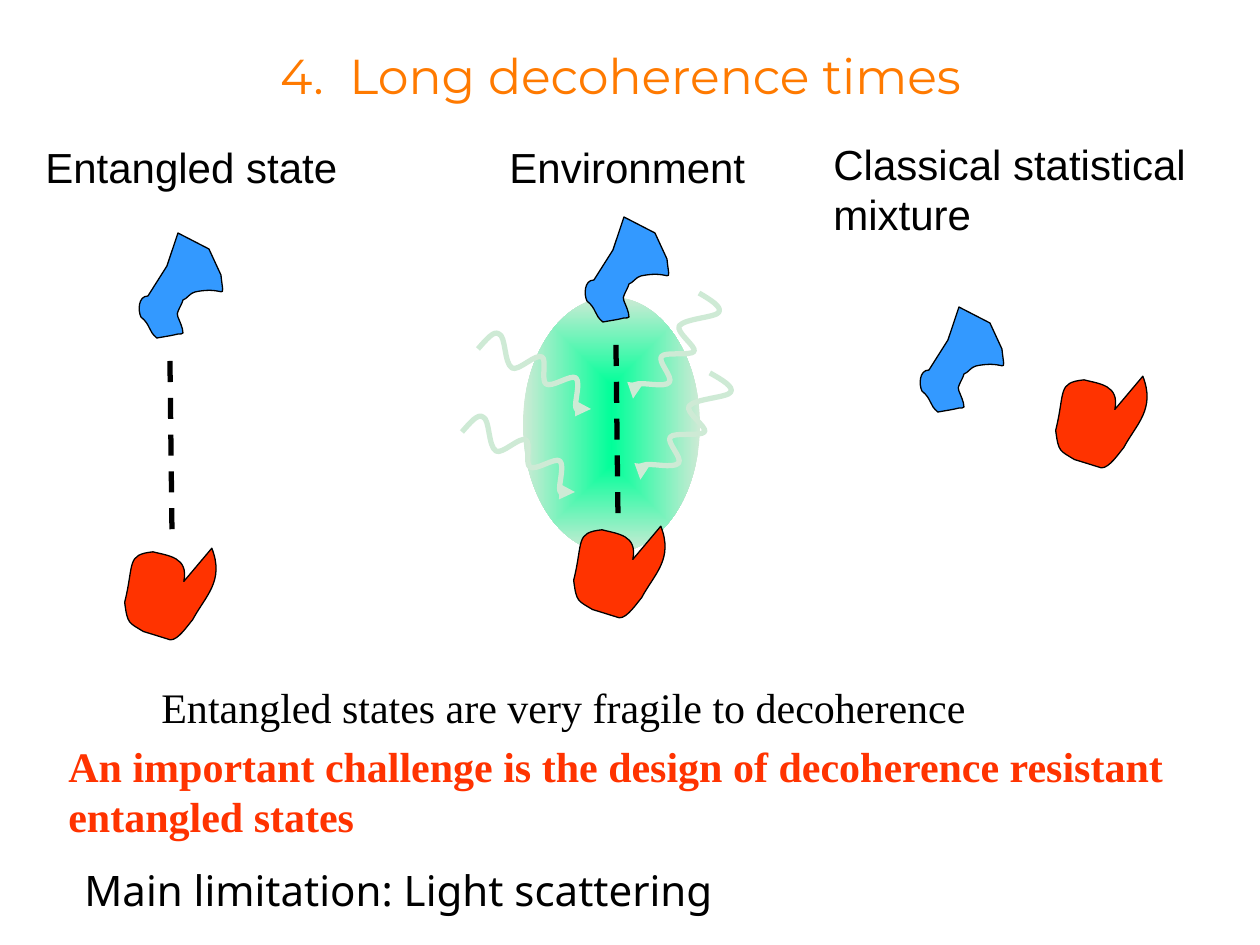
from lxml.etree import SubElement
from pptx import Presentation
from pptx.dml.color import RGBColor
from pptx.enum.dml import MSO_LINE
from pptx.enum.shapes import MSO_CONNECTOR, MSO_SHAPE
from pptx.enum.text import MSO_AUTO_SIZE as AutoSize, PP_ALIGN as Align
from pptx.oxml.ns import qn
from pptx.util import Pt

PX = 914400 / 126
BLACK, BLUE, RED, ORANGE = "000000", "3399FF", "FF3300", "FF7A00"
GREEN, PALE_GREEN = "00FF99", "CEEAD5"

# Outlines: a start point, then line ends (x, y) or Bezier triples (x1, y1, x2, y2, x, y).
BLUE_PARTICLE = [
    (29, 33), (40, 0), (71, 16), (83, 42),
    (86, 71, 89, 52, 57, 59), (52, 60, 49, 66, 45, 67),
    (44, 72, 37, 81, 40, 84), (42, 89, 45, 95, 45, 100),
    (45, 101, 42, 101, 40, 101), (32, 103, 30, 103, 19, 105),
    (10, 98, 13, 92, 3, 84), (0, 78, 0, 63, 10, 63),
]
RED_PARTICLE = [
    (3, 32), (9, 16, 7, 15, 28, 8), (68, 10, 75, 0, 83, 26),
    (82, 42, 85, 62, 60, 62), (98, 83), (68, 102, 50, 86, 24, 78),
    (19, 75, 1, 68, 0, 60), (1, 51, 2, 42, 3, 32),
]
WAVE_FROM_LEFT = [
    (0, 19), (8, 10, 16, 0, 21, 4), (28, 6, 26, 33, 34, 38),
    (40, 42, 58, 23, 64, 27), (69, 29, 63, 51, 68, 54),
    (74, 58, 93, 44, 98, 48), (103, 53, 96, 73, 98, 78),
    (101, 83, 107, 81, 113, 79),
]
WAVE_FROM_RIGHT = [
    (0, 23), (7, 12, 15, 0, 20, 4), (25, 7, 25, 38, 32, 44),
    (38, 48, 53, 28, 58, 30), (63, 34, 57, 59, 62, 63),
    (67, 67, 83, 52, 88, 56), (94, 61, 86, 84, 89, 90),
    (91, 97, 98, 94, 103, 93),
]
RED_TURN, RIGHT_TURN = 281.2, 87.8

PARTICLES = [  # blue position, red position
    ((138, 233), (122, 539)),
    ((584, 217), (571, 517)),
    ((919, 307), (1053, 367)),
]
ENTANGLEMENT_LINES = [(170, 361, 172, 532), (616, 345, 618, 517)]
WAVES = [  # outline, position, rotation, stretch in x and y
    (WAVE_FROM_LEFT, (462, 413), 0, (1, 1)),
    (WAVE_FROM_RIGHT, (624, 297), RIGHT_TURN, (1, 1)),
    (WAVE_FROM_RIGHT, (633, 375), RIGHT_TURN, (1.01, 1.05)),
    (WAVE_FROM_LEFT, (478, 330), 0, (1, 1)),
]
ENVIRONMENT = (523, 297, 177, 256)

SERIF = "Times New Roman"
TEXTS = [
    ("4.  Long decoherence times", (161, 39, 919, 92),
     dict(font="Montserrat", size=28, color=ORANGE, align=Align.CENTER, wrap=False, grow=False)),
    ("Entangled state", (33, 135, 318, 63), dict(wrap=False)),
    ("Environment", (497, 135, 261, 63), dict(wrap=False)),
    ("Classical statistical mixture", (821, 132, 412, 113), {}),
    ("Entangled states are very fragile to decoherence", (149, 675, 1134, 63), dict(font=SERIF)),
    ("An important challenge is the design of decoherence resistant entangled states",
     (56, 734, 1236, 115), dict(font=SERIF, color=RED, bold=True)),
    ("Main limitation: Light scattering", (72, 858, 1114, 63), dict(font="Noto Sans")),
]


def px(*lengths):
    return [round(length * PX) for length in lengths]


def rgb(color):
    return RGBColor.from_string(color)


def add_text(slide, text, box, font="Arial", size=24, color=BLACK, bold=False,
             align=Align.LEFT, wrap=True, grow=True):
    frame = slide.shapes.add_textbox(*px(*box)).text_frame
    frame.word_wrap = wrap
    frame.auto_size = AutoSize.SHAPE_TO_FIT_TEXT if grow else AutoSize.NONE
    paragraph = frame.paragraphs[0]
    paragraph.alignment = align
    run = paragraph.add_run()
    run.text = text
    run.font.name, run.font.size, run.font.bold = font, Pt(size), bold
    run.font.color.rgb = rgb(color)


def bend(shape, segments):
    """Join the three straight steps of each Bezier segment into one curve."""
    steps = iter(list(shape._element.iter(qn("a:lnTo"))))
    for segment in segments:
        curve = next(steps)
        if len(segment) == 6:
            curve.tag = qn("a:cubicBezTo")
            for _ in range(2):
                step = next(steps)
                curve.append(step[0])
                step.getparent().remove(step)


def add_outline(slide, outline, origin, line, width, fill=None, rotation=0, stretch=(1, 1)):
    (left, top), (stretch_x, stretch_y) = origin, stretch
    points = [px(left + segment[i] * stretch_x, top + segment[i + 1] * stretch_y)
              for segment in outline for i in range(0, len(segment), 2)]
    builder = slide.shapes.build_freeform(*points[0])
    builder.add_line_segments(points[1:], close=fill is not None)
    shape = builder.convert_to_shape()
    bend(shape, outline[1:])
    shape.rotation = rotation
    shape.shadow.inherit = False
    if fill:
        shape.fill.solid()
        shape.fill.fore_color.rgb = rgb(fill)
    else:
        shape.fill.background()
    shape.line.color.rgb = rgb(line)
    shape.line.width = Pt(width)
    return shape


def add_wave(slide, outline, origin, rotation, stretch):
    wave = add_outline(slide, outline, origin, PALE_GREEN, 3, rotation=rotation, stretch=stretch)
    SubElement(wave.line._get_or_add_ln(), qn("a:tailEnd"), type="triangle")


def add_dashed_line(slide, ends):
    connector = slide.shapes.add_connector(MSO_CONNECTOR.STRAIGHT, *px(*ends))
    connector.line.color.rgb = rgb(BLACK)
    connector.line.width = Pt(3)
    connector.line.dash_style = MSO_LINE.DASH
    SubElement(connector._element.spPr, qn("a:effectLst"))


def add_environment(slide):
    """Draw the ellipse with a gradient that spreads from its centre."""
    ellipse = slide.shapes.add_shape(MSO_SHAPE.OVAL, *px(*ENVIRONMENT))
    ellipse.shadow.inherit = False
    ellipse.line.fill.background()
    ellipse.fill.gradient()
    for stop, color, position in zip(ellipse.fill.gradient_stops, (GREEN, PALE_GREEN), (0, 1)):
        stop.color.rgb = rgb(color)
        stop.position = position
    gradient = ellipse._element.spPr.find(qn("a:gradFill"))
    gradient.remove(gradient.find(qn("a:lin")))
    spread = SubElement(gradient, qn("a:path"), path="shape")
    SubElement(spread, qn("a:fillToRect"), l="50000", t="50000", r="50000", b="50000")


def main():
    presentation = Presentation()
    presentation.slide_width, presentation.slide_height = px(1260, 945)
    slide = presentation.slides.add_slide(presentation.slide_layouts[6])
    add_environment(slide)
    for wave in WAVES:
        add_wave(slide, *wave)
    for blue_origin, red_origin in PARTICLES:
        add_outline(slide, BLUE_PARTICLE, blue_origin, BLACK, 0.75, fill=BLUE)
        add_outline(slide, RED_PARTICLE, red_origin, BLACK, 0.75, fill=RED, rotation=RED_TURN)
    for ends in ENTANGLEMENT_LINES:
        add_dashed_line(slide, ends)
    for text, box, style in TEXTS:
        add_text(slide, text, box, **style)
    presentation.save("out.pptx")


if __name__ == "__main__":
    main()
